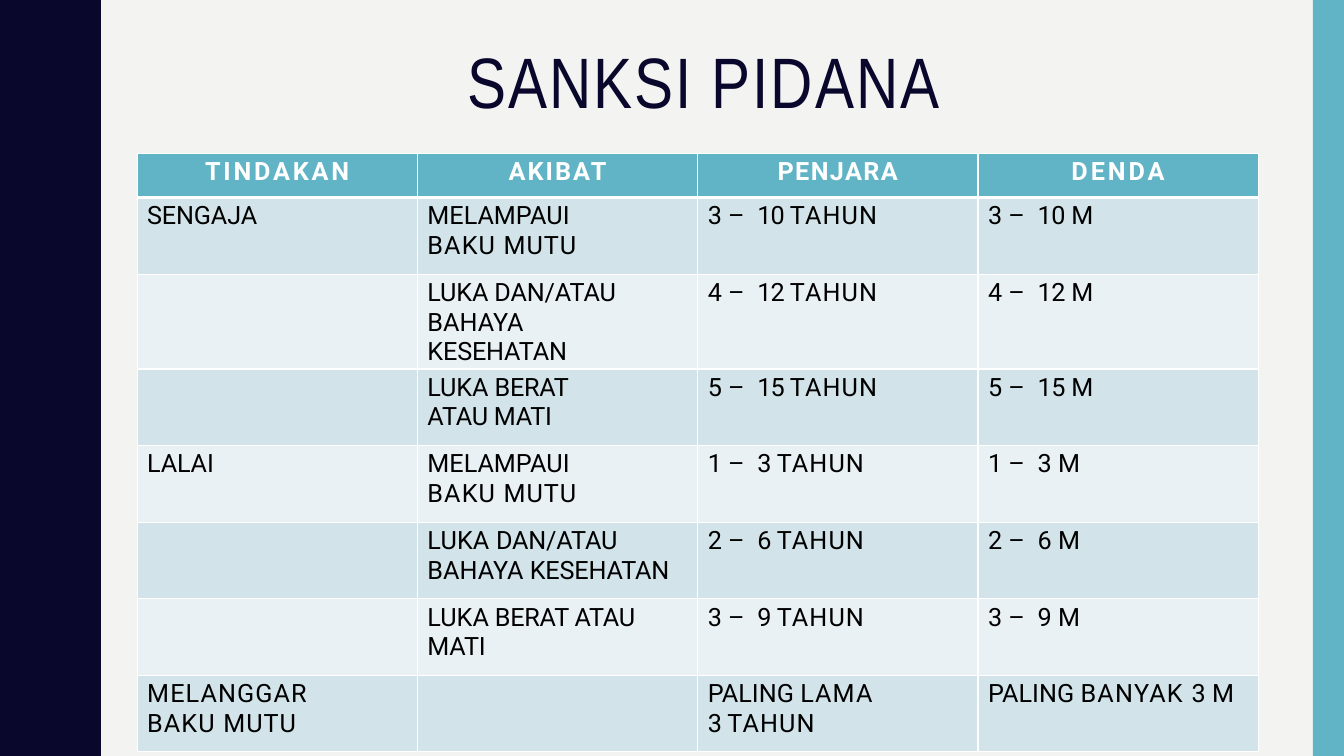
"""Builds the slide on criminal sanctions: a wavy side band, a title and a table."""
from lxml import etree
from pptx import Presentation
from pptx import util as u
from pptx.dml.color import RGBColor
from pptx.enum import shapes, text
from pptx.oxml import ns

NAVY, TEAL, WHITE = "0A072D", "61B4C5", "FFFFFF"
BANDS = ["D2E4EA", "EAF1F5"]


def paint(fill, colour):
    fill.solid()
    fill.fore_color.rgb = RGBColor.from_string(colour)


def write(frame, paragraphs, size=18, font="Roboto", colour="000000", bold=False, align=text.PP_ALIGN.LEFT, before=3):
    for index, runs in enumerate(paragraphs):
        line = frame.paragraphs[0] if index == 0 else frame.add_paragraph()
        line.alignment = align
        line.space_before = u.Pt(0 if index else before)
        for words, spacing in runs:
            run = line.add_run()
            run.text = words
            run.font.size = u.Pt(size)
            run.font.name = font
            run.font.bold = bold
            paint(run.font.fill, colour)
            run.font._element.set("spc", str(round(spacing * 100)))


deck = Presentation()
deck.slide_width, deck.slide_height = u.Inches(13.33), u.Inches(7.5)
slide = deck.slides.add_slide(deck.slide_layouts[6])
paint(slide.background.fill, "F3F3F1")

crest = [(0.78, 0), (0.78, 0.07), (0.79, 0.14), (0.8, 0.2), (0.81, 0.25), (0.83, 0.29), (0.85, 0.33),
         (0.89, 0.42), (0.91, 0.46), (0.93, 0.5), (0.95, 0.55), (0.96, 0.61), (0.96, 0.68), (0.97, 0.75)]
wave = crest + [(x, 1.5 - y) for x, y in reversed(crest[1:-1])]
edge = [(x, y + 1.5 * period) for period in range(5) for x, y in wave]
outline = slide.shapes.build_freeform(0, 0, scale=u.Inches(1))
outline.add_line_segments(edge + [(0.78, 7.5), (0, 7.5)])
side_band = outline.convert_to_shape()
right_strip = slide.shapes.add_shape(
    shapes.MSO_SHAPE.RECTANGLE, u.Inches(13.02), 0, u.Inches(0.31), u.Inches(7.5))
for decoration, colour in [(side_band, NAVY), (right_strip, TEAL)]:
    paint(decoration.fill, colour)
    decoration.line.fill.background()
    decoration.shadow.inherit = False

title = slide.shapes.add_textbox(u.Inches(1.46), u.Inches(0.36), u.Inches(10.96), u.Inches(0.88)).text_frame
title.word_wrap = True
title.margin_left, title.margin_top = u.Inches(3.18), u.Inches(0.01)
title.margin_right = title.margin_bottom = 0
write(title, [[("SANKSI PIDANA", 1.4)]], size=51, font="Arial Narrow", colour=NAVY, before=1)

headings = [("TINDAKAN", 2), ("AKIBAT", 1.5), ("PENJARA", 1), ("DENDA", 2.1)]
exceeding = [[("MELAMPAUI ", 0), ("BAKU ", 0.8), ("MUTU", 0.7)]]
cases = [
    ([[("SENGAJA", -0.1)]], exceeding, 0.88, "3", "10"),
    ([], [[("LUKA ", -0.1), ("DAN/ATAU ", -0.1), ("BAHAYA ", 0), ("KESEHATAN", -0.1)]], 0.55, "4", "12"),
    ([], [[("LUKA ", -0.1), ("BERAT ATAU MATI", -0.2)]], 0.88, "5", "15"),
    ([[("LALAI", -0.1)]], exceeding, 0.88, "1", "3"),
    ([], [[("LUKA ", 0.1), ("DAN/ATAU", -0.1)], [("BAHAYA ", 0), ("KESEHATAN", -0.1)]], 0, "2", "6"),
    ([], [[("LUKA", 0), (" BERAT ATAU", -0.2)], [("MATI", -0.2)]], 0, "3", "9"),
]
rows = [[([[heading]], 0) for heading in headings]]
for act, effect, effect_margin, low, high in cases:
    span = [(low + " ", 0), ("– ", 2.3)]
    prison = span + [(high + " ", -0.7), ("TAHUN", 0.8)]
    fine = span + [(high + " ", -0.3 if len(high) > 1 else 0), ("M", 0.8)]
    rows.append([(act, 0), (effect, effect_margin), ([prison], 0), ([fine], 0)])
rows.append([
    ([[("MELANGGAR BAKU ", 0.8), ("MUTU", 0.7)]], 0.75),
    ([], 0),
    ([[("PALING ", 0), ("LAMA ", 0.8), ("3 ", -0.5), ("TAHUN", 0.8)]], 0.95),
    ([[("PALING ", 0), ("BANYAK ", 0.9), ("3 ", 0), ("M", 0.8)]], 0),
])

sanctions = slide.shapes.add_table(
    len(rows), 4, u.Inches(1.36), u.Inches(1.52), u.Inches(11.13), u.Inches(5.76)).table
for column in sanctions.columns:
    column.width = u.Inches(2.78)
for r, entries in enumerate(rows):
    sanctions.rows[r].height = u.Inches(0.76 if r else 0.44)
    for c, (paragraphs, right_margin) in enumerate(entries):
        cell = sanctions.cell(r, c)
        cell.margin_left = u.Inches(0.1 if r else 0)
        cell.margin_right = u.Inches(right_margin)
        cell.margin_top, cell.margin_bottom = u.Inches(0.04), 0
        if r:
            write(cell.text_frame, paragraphs)
        else:
            write(cell.text_frame, paragraphs, colour=WHITE, bold=True, align=text.PP_ALIGN.CENTER)
        properties = cell._tc.get_or_add_tcPr()
        for side in ["lnL", "lnR", "lnT", "lnB"]:
            thick = (r, side) in [(0, "lnB"), (1, "lnT")]
            border = etree.SubElement(properties, ns.qn("a:" + side), w=str(u.Pt(3 if thick else 1)))
            solid = etree.SubElement(border, ns.qn("a:solidFill"))
            etree.SubElement(solid, ns.qn("a:srgbClr"), val=WHITE)
        paint(cell.fill, BANDS[(r - 1) % 2] if r else TEAL)

deck.save("out.pptx")
